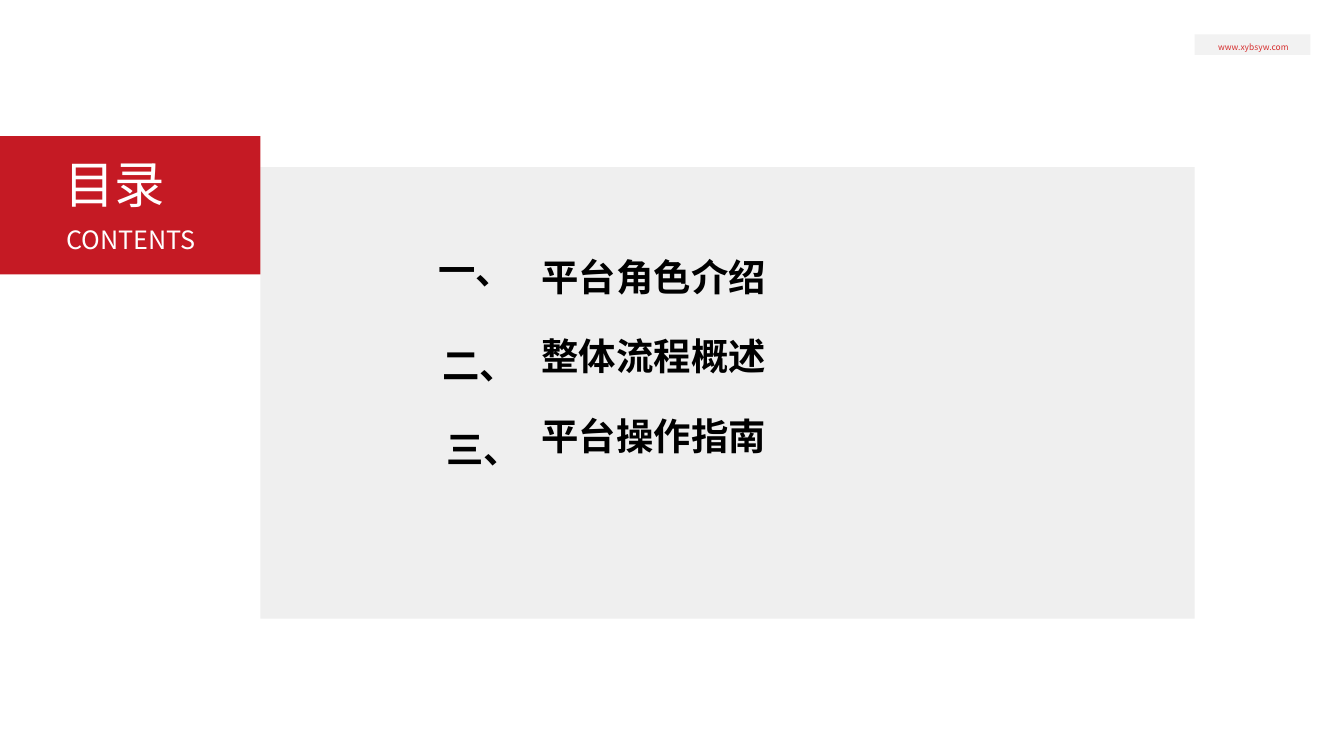
from lxml.etree import SubElement as Sub
from pptx import Presentation
from pptx.dml.color import RGBColor
from pptx.enum.shapes import MSO_SHAPE as Form
from pptx.enum.text import MSO_ANCHOR as Anchor, MSO_AUTO_SIZE as Auto, PP_ALIGN as Align
from pptx.oxml.ns import qn
from pptx.util import Pt

RED = RGBColor(0xC5, 0x1A, 0x24)
LINK = RGBColor(0xD6, 0x2F, 0x2F)
PANEL = RGBColor(0xEF, 0xEF, 0xEF)
BADGE = RGBColor(0xF2, 0xF2, 0xF2)
WHITE = RGBColor(0xFF, 0xFF, 0xFF)
BLACK = RGBColor(0, 0, 0)
FONT = "Noto Sans CJK SC"


class Deck:
    def __init__(self, wide, high):
        self.file = Presentation()
        self.file.slide_width, self.file.slide_height = Pt(wide), Pt(high)
        self.slide = self.file.slides.add_slide(self.file.slide_layouts[1])

    def rect(self, area, fill, host=None):
        host = host or self.slide
        shape = host.shapes.add_shape(Form.RECTANGLE, *map(Pt, area))
        shape.shadow.inherit = False
        shape.fill.solid()
        shape.fill.fore_color.rgb = fill
        shape.line.fill.background()

    def label(self, shape, lines, size, color, align=Align.LEFT,
              bold=False, pad=(3.6, 3.6), gap=0):
        frame = shape.text_frame
        style = {"word_wrap": True, "auto_size": Auto.NONE,
                 "vertical_anchor": Anchor.TOP,
                 "margin_left": Pt(pad[0]), "margin_right": Pt(pad[0]),
                 "margin_top": Pt(pad[1]), "margin_bottom": Pt(pad[1])}
        for name, value in style.items():
            setattr(frame, name, value)
        for i, line in enumerate(lines):
            para = frame.paragraphs[0] if i == 0 else frame.add_paragraph()
            para.alignment = align
            para.space_before = Pt(gap if i else 0)
            run = para.add_run()
            run.text = line
            look = {"size": Pt(size), "bold": bold, "name": FONT}
            for name, value in look.items():
                setattr(run.font, name, value)
            run.font.color.rgb = color
            Sub(run.font._element, qn("a:ea"), typeface=FONT)

    def text(self, area, line, size, color, host=None, **style):
        host = host or self.slide
        box = host.shapes.add_textbox(*map(Pt, area))
        self.label(box, [line], size, color, **style)

    def hold(self, index, area, lines, size, color, **style):
        """Fill a placeholder and bring it to the front."""
        shape = self.slide.placeholders[index]
        spots = zip(("left", "top", "width", "height"), area)
        for name, value in spots:
            setattr(shape, name, Pt(value))
        shape.element.getparent().append(shape.element)
        self.label(shape, lines, size, color, **style)
        for para in shape.text_frame.paragraphs:
            props = para._p.get_or_add_pPr()
            props.set("marL", "0")
            props.set("indent", "0")
            Sub(props, qn("a:buNone"))


def main():
    deck = Deck(720, 405)

    # Panel and heading block
    deck.rect((139.5, 89.5, 500.5, 242), PANEL)
    deck.rect((0, 73, 139.5, 74), RED)
    deck.hold(0, (31, 78.5, 76.5, 39.5), ["目录"], 27, WHITE, align=Align.JUSTIFY)
    deck.text((19.5, 116.5, 101.5, 24), "CONTENTS", 13.5, WHITE, align=Align.CENTER)

    # Topics
    topics = ["平台角色介绍", "整体流程概述", "平台操作指南"]
    deck.hold(1, (286.5, 133.2, 163, 130), topics, 20, BLACK,
              bold=True, pad=(3.6, 2.9), gap=18.5)

    # Topic numbers
    marks = [("一、", 227.5, 129, 55), ("二、", 227.5, 180, 59), ("三、", 229.5, 224.6, 59)]
    for mark, left, top, wide in marks:
        deck.text((left, top, wide, 31.5), mark, 20, BLACK,
                  align=Align.CENTER, bold=True, pad=(7.2, 3.6))

    # Web address badge
    group = deck.slide.shapes.add_group_shape()
    deck.rect((640, 18.5, 62, 11), BADGE, group)
    deck.text((648, 19.2, 47, 13), "www.xybsyw.com", 4.5, LINK, group, align=Align.CENTER)

    deck.file.save("out.pptx")


if __name__ == "__main__":
    main()
